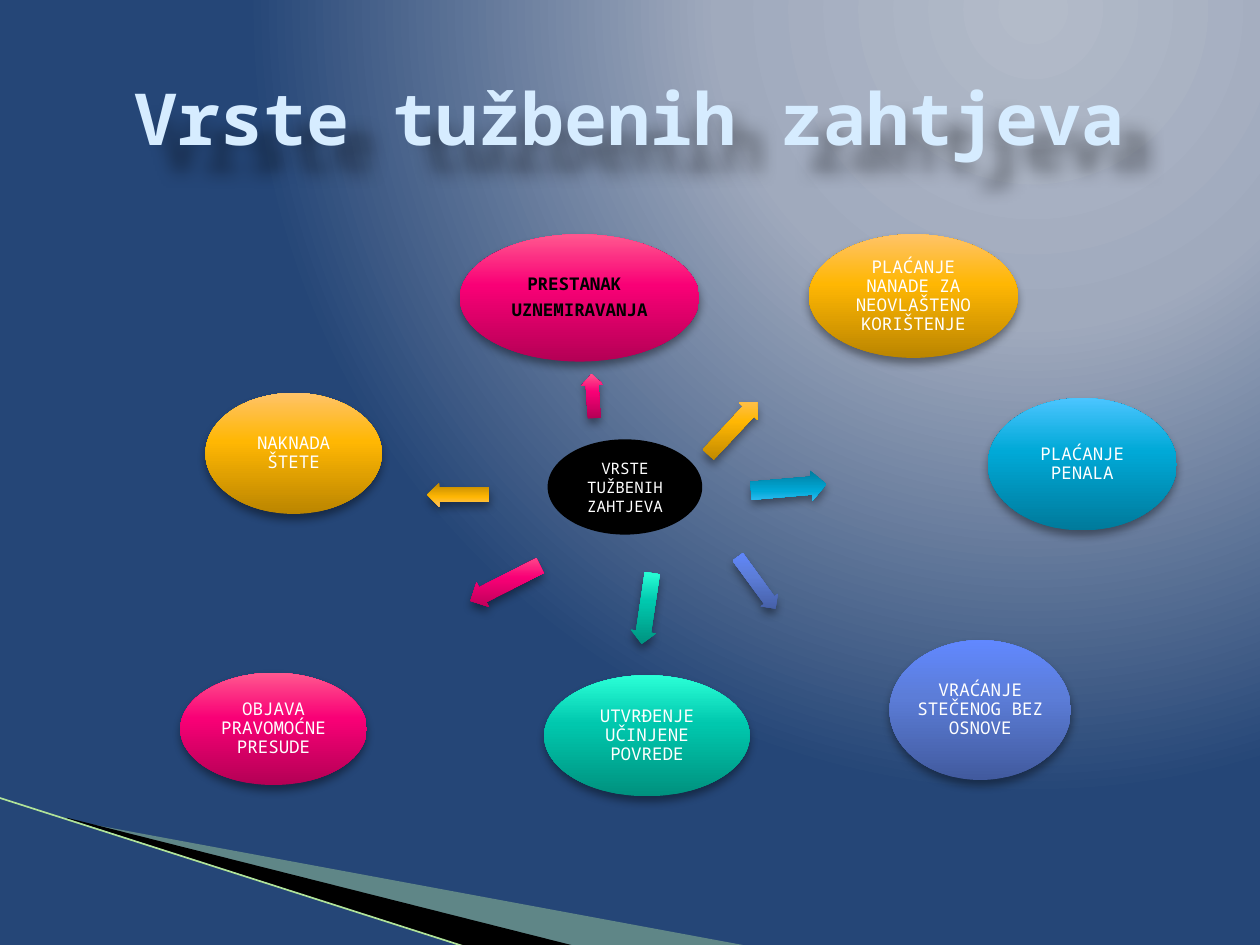
from lxml import etree
from pptx import Presentation
from pptx.dml.color import RGBColor
from pptx.enum import shapes, text
from pptx.oxml import ns
from pptx.util import Pt

FONT = "Noto Sans Mono"
TITLE = "Vrste tužbenih zahtjeva"
TITLE_BOX = (36, 21.6, 648, 90)
CENTRE = ["VRSTE TUŽBENIH", "ZAHTJEVA"]
CENTRE_BOX = (314.6, 252.7, 85, 51.1)

PINK = [(0, "B40055"), (60, "F90076"), (100, "FF588F")]
AMBER = [(0, "BB8500"), (60, "FFB703"), (100, "FFC368")]
CYAN = [(0, "007A9B"), (60, "00A9D7"), (100, "4BC5FF")]
INDIGO = [(0, "415A9E"), (60, "5C7DD8"), (100, "6188FF")]
TEAL = [(0, "00917E"), (60, "00C8AE"), (100, "2BFFD7")]
BACKDROP = [(0, "B3BBC9"), (40, "A0AABD"), (100, "254677")]

# paragraphs, text colour, bold, gradient, ellipse box, arrow box, arrow rotation, arrow flipped
CLAIMS = [
    (["PRESTANAK ", "UZNEMIRAVANJA"], "000000", True, PINK,
     (262.8, 133.9, 136.8, 72.7), (326.2, 220.3, 25.2, 12.2), 266.4, False),
    (["PLAĆANJE NANADE ZA NEOVLAŠTENO KORIŠTENJE"], "FFFFFF", False, AMBER,
     (462.2, 133.9, 119.5, 70.6), (398.2, 237.6, 41, 14.4), 312.9, False),
    (["PLAĆANJE PENALA"], "FFFFFF", False, CYAN,
     (564.5, 227.5, 108, 75.6), (429.1, 270, 43.2, 17.3), 355.1, True),
    (["VRAĆANJE STEČENOG BEZ OSNOVE"], "FFFFFF", False, INDIGO,
     (508.3, 365.8, 103.7, 79.9), (414, 326.9, 36.7, 12.2), 53.9, False),
    (["UTVRĐENJE UČINJENE POVREDE"], "FFFFFF", False, TEAL,
     (311, 385.9, 117.4, 69.1), (349.2, 340.6, 41, 14.4), 98.5, False),
    (["OBJAVA PRAVOMOĆNE PRESUDE"], "FFFFFF", False, PINK,
     (103, 384.5, 106.6, 64.1), (266.4, 325.4, 44.6, 15.8), 153.1, False),
    (["NAKNADA ŠTETE"], "FFFFFF", False, AMBER,
     (117.4, 224.6, 100.8, 69.1), (244.1, 275.8, 35.3, 13.7), 180, True),
]

# points, colour, opacity in percent
WEDGES = [
    ([(39.6, 468.7), (428.4, 540.7), (328.3, 540.7), (39.6, 468)], "B8E7A1", 40),
    ([(38.2, 467.3), (329, 540.7), (267.8, 541.4), (38.9, 468)], "000000", 100),
]
EDGE = (-0.7, 455.8, 267.1, 541.4)


def rgb(code):
    return RGBColor.from_string(code)


def points(values):
    return [Pt(value) for value in values]


def add_node(parent, tag, **attributes):
    node = etree.SubElement(parent, ns.qn(tag))
    for key, value in attributes.items():
        node.set(key, str(value))
    return node


def set_gradient(fill, owner, stops):
    """Give fill the stops and return its emptied gradient element, ready for a direction."""
    fill.gradient()
    gradient = next(owner.iter(ns.qn("a:gradFill")))
    for child in list(gradient):
        gradient.remove(child)
    gradient.set("rotWithShape", "0")
    stop_list = add_node(gradient, "a:gsLst")
    for position, code in stops:
        stop = add_node(stop_list, "a:gs", pos=position * 1000)
        add_node(stop, "a:srgbClr", val=code)
    return gradient


def add_shadow(shape, blur, distance, angle):
    shape.shadow.inherit = False
    effects = shape._element.spPr.find(ns.qn("a:effectLst"))
    shadow = add_node(effects, "a:outerShdw", blurRad=Pt(blur), dist=Pt(distance),
                      dir=angle * 60000, algn="tl", rotWithShape=0)
    add_node(add_node(shadow, "a:srgbClr", val="000000"), "a:alpha", val=40000)


def write(frame, lines, size, code, bold=False, spaced=False):
    frame.word_wrap = True
    frame.vertical_anchor = text.MSO_ANCHOR.MIDDLE
    for index, line in enumerate(lines):
        paragraph = frame.add_paragraph() if index else frame.paragraphs[0]
        paragraph.alignment = text.PP_ALIGN.CENTER
        if spaced:
            paragraph.line_spacing = 0.9
            paragraph.space_after = Pt(4)
        run = paragraph.add_run()
        run.text = line
        run.font.name, run.font.size, run.font.bold = FONT, Pt(size), bold
        run.font.color.rgb = rgb(code)


def add_glossy(slide, kind, box, stops):
    shape = slide.shapes.add_shape(kind, *points(box))
    gradient = set_gradient(shape.fill, shape._element, stops)
    add_node(gradient, "a:lin", ang=270 * 60000, scaled=0)
    shape.line.fill.background()
    add_shadow(shape, 5.2, 3, 90)
    return shape


def add_backdrop(slide):
    gradient = set_gradient(slide.background.fill, slide._element, BACKDROP)
    circle = add_node(gradient, "a:path", path="circle")
    add_node(circle, "a:fillToRect", l=65000, t=0, r=0, b=98000)

    for corners, code, opacity in WEDGES:
        first, *rest = [points(corner) for corner in corners]
        builder = slide.shapes.build_freeform(*first)
        builder.add_line_segments(rest, close=True)
        wedge = builder.convert_to_shape()
        wedge.shadow.inherit = False
        wedge.line.fill.background()
        wedge.fill.solid()
        wedge.fill.fore_color.rgb = rgb(code)
        if opacity < 100:
            color = next(wedge._element.spPr.iter(ns.qn("a:srgbClr")))
            add_node(color, "a:alpha", val=opacity * 1000)

    edge = slide.shapes.add_connector(shapes.MSO_CONNECTOR.STRAIGHT, *points(EDGE))
    edge.line.color.rgb = rgb("B1E399")
    edge.line.width = Pt(0.95)
    add_node(edge._element.spPr, "a:effectLst")


def add_claim(slide, lines, code, bold, stops, ellipse_box, arrow_box, rotation, flipped):
    ellipse = add_glossy(slide, shapes.MSO_SHAPE.OVAL, ellipse_box, stops)
    frame = ellipse.text_frame
    frame.margin_left = frame.margin_right = Pt(0.7)
    frame.margin_top = frame.margin_bottom = Pt(0.7)
    write(frame, lines, 10, code, bold, spaced=True)

    arrow = add_glossy(slide, shapes.MSO_SHAPE.RIGHT_ARROW, arrow_box, stops)
    arrow.adjustments[0], arrow.adjustments[1] = 0.6, 0.5
    arrow.rotation = rotation
    if flipped:
        arrow._element.spPr.find(ns.qn("a:xfrm")).set("flipV", "1")


def main():
    deck = Presentation()
    deck.slide_width, deck.slide_height = Pt(720), Pt(540)
    slide = deck.slides.add_slide(deck.slide_layouts[5])
    add_backdrop(slide)

    title = slide.shapes.title
    title.left, title.top, title.width, title.height = points(TITLE_BOX)
    write(title.text_frame, [TITLE], 41, "D6ECFF", bold=True)
    add_shadow(title, 10, 20, 45)

    for claim in CLAIMS:
        add_claim(slide, *claim)

    centre = slide.shapes.add_shape(shapes.MSO_SHAPE.OVAL, *points(CENTRE_BOX))
    centre.shadow.inherit = False
    centre.fill.solid()
    centre.fill.fore_color.rgb = centre.line.color.rgb = rgb("000000")
    centre.line.width = Pt(3.35)
    write(centre.text_frame, CENTRE, 9, "FFFFFF")

    deck.save("out.pptx")


if __name__ == "__main__":
    main()
